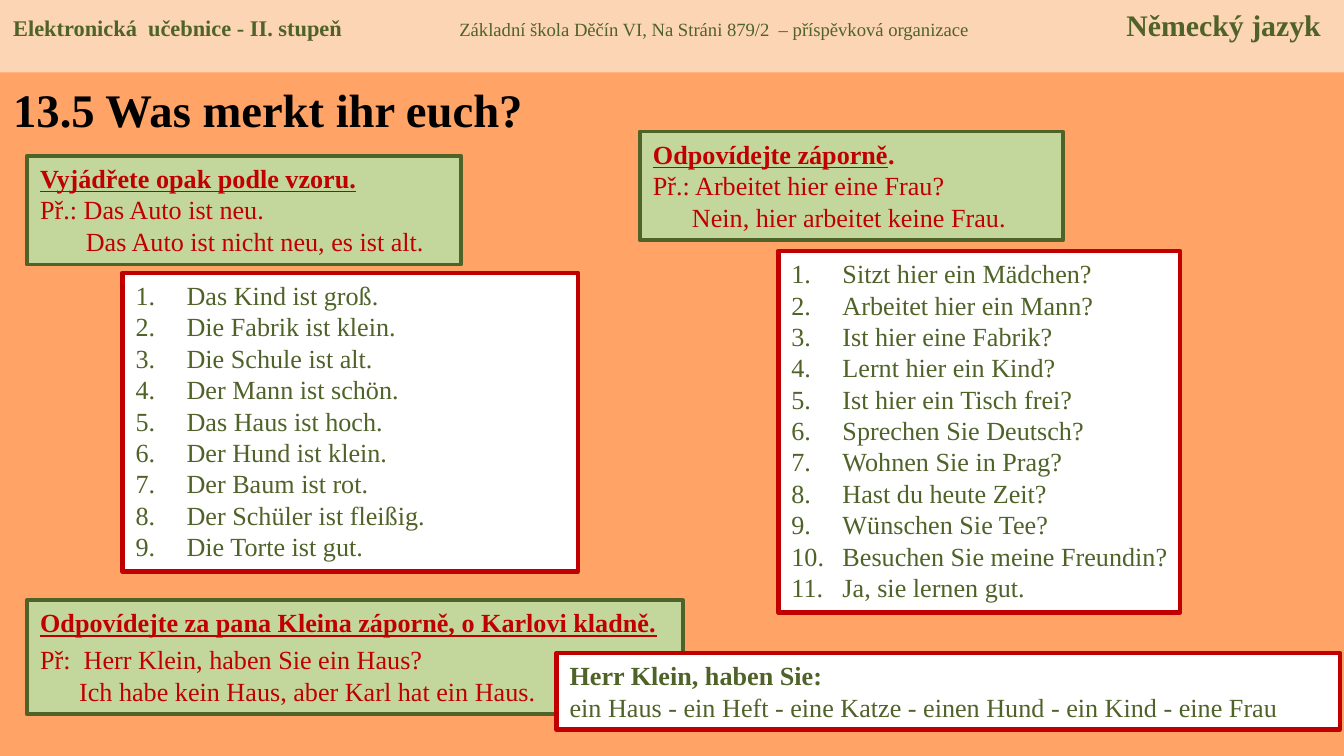
from lxml.etree import SubElement
from pptx import Presentation
from pptx.dml.color import RGBColor
from pptx.enum.shapes import MSO_SHAPE
from pptx.enum.text import MSO_ANCHOR, PP_ALIGN
from pptx.oxml.ns import qn
from pptx.util import Inches, Pt

WIDTH = Inches(10)
HEIGHT = WIDTH * 9 // 16
FONT = "Times New Roman"
COLORS = {
    "background": "FFA366",
    "header": "FCD5B5",
    "task": "C3D69B",
    "white": "FFFFFF",
    "black": "000000",
    "green": "4F6228",
    "red": "C00000",
}
OPPOSITES = [
    "Das Kind ist groß.", "Die Fabrik ist klein.", "Die Schule ist alt.",
    "Der Mann ist schön.", "Das Haus ist hoch.", "Der Hund ist klein.",
    "Der Baum ist rot.", "Der Schüler ist fleißig.", "Die Torte ist gut.",
]
QUESTIONS = [
    "Sitzt hier ein Mädchen?", "Arbeitet hier ein Mann?", "Ist hier eine Fabrik?",
    "Lernt hier ein Kind?", "Ist hier ein Tisch frei?", "Sprechen Sie Deutsch?",
    "Wohnen Sie in Prag?", "Hast du heute Zeit?", "Wünschen Sie Tee?",
    "Besuchen Sie meine Freundin?", "Ja, sie lernen gut.",
]


def color(name):
    """Return the named colour."""
    return RGBColor.from_string(COLORS[name])


def place(left, top, width, height):
    """Turn percentages of the slide's size into lengths."""
    return [int(share * side / 100) for share, side in
            zip((left, top, width, height), (WIDTH, HEIGHT) * 2)]


def style(run, size, color_name, bold=False, underline=False):
    """Format one run."""
    run.font.name = FONT
    run.font.size = Pt(size)
    run.font.bold = bold
    run.font.underline = underline
    run.font.color.rgb = color(color_name)


def add_box(slide, area, fill, line=None, line_width=0):
    """Add a filled rectangle and return its text frame."""
    shape = slide.shapes.add_shape(MSO_SHAPE.RECTANGLE, *place(*area))
    shape.shadow.inherit = False
    shape.fill.solid()
    shape.fill.fore_color.rgb = color(fill)
    if line:
        shape.line.color.rgb = color(line)
        shape.line.width = Pt(line_width)
    else:
        shape.line.fill.background()
    text_frame = shape.text_frame
    text_frame.word_wrap = True
    text_frame.vertical_anchor = MSO_ANCHOR.TOP
    return text_frame


def write_lines(text_frame, lines):
    """Fill a text frame with left-aligned paragraphs and return them."""
    text_frame.text = "\n".join(lines)
    for paragraph in text_frame.paragraphs:
        paragraph.alignment = PP_ALIGN.LEFT
    return text_frame.paragraphs


def add_title(slide, text):
    """Add the lesson title."""
    text_frame = slide.shapes.add_textbox(*place(0, 9.8, 40.4, 9.2)).text_frame
    text_frame.word_wrap = False
    text_frame.vertical_anchor = MSO_ANCHOR.MIDDLE
    paragraph = write_lines(text_frame, [text])[0]
    style(paragraph.runs[0], 25, "black", bold=True)


def add_header(slide, parts):
    """Add the header band with its parts set apart by tab stops."""
    text_frame = add_box(slide, (0, 0, 100, 9.6), "header")
    paragraph = text_frame.paragraphs[0]
    paragraph.alignment = PP_ALIGN.LEFT
    tabs = SubElement(paragraph._p.get_or_add_pPr(), qn("a:tabLst"))
    for position, alignment in ((3.32, "l"), (9.73, "r")):
        SubElement(tabs, qn("a:tab"), pos=str(Inches(position)), algn=alignment)
    for index, (text, size, bold) in enumerate(parts):
        run = paragraph.add_run()
        run.text = "\t" + text if index else text
        style(run, size, "green", bold)


def add_task(slide, area, heading, example, answer, indent, ending="", gap=0):
    """Add a task box with an underlined heading and a worked example."""
    text_frame = add_box(slide, area, "task", "green", 2)
    paragraphs = write_lines(text_frame, [heading, example, answer])
    for paragraph in paragraphs:
        is_heading = paragraph.text == heading
        style(paragraph.runs[0], 14, "red", is_heading, is_heading)
    if ending:
        run = paragraphs[0].add_run()
        run.text = ending
        style(run, 14, "red", bold=True)
    paragraphs[0].space_after = Pt(gap)
    paragraphs[2]._p.get_or_add_pPr().set("marL", str(Inches(indent)))


def add_exercise(slide, area, sentences):
    """Add a framed box with numbered sentences."""
    text_frame = add_box(slide, area, "white", "red", 2.5)
    text_frame.margin_right = Inches(0.05)
    for paragraph in write_lines(text_frame, sentences):
        properties = paragraph._p.get_or_add_pPr()
        properties.set("marL", str(Inches(0.38)))
        properties.set("indent", str(-Inches(0.38)))
        SubElement(properties, qn("a:buFont"), typeface="+mj-lt")
        SubElement(properties, qn("a:buAutoNum"), type="arabicPeriod")
        style(paragraph.runs[0], 14, "green")


def add_word_list(slide, area, heading, words):
    """Add a framed box with a bold heading and a row of words."""
    text_frame = add_box(slide, area, "white", "red", 2.5)
    paragraphs = write_lines(text_frame, [heading, " - ".join(words)])
    style(paragraphs[0].runs[0], 14, "green", bold=True)
    style(paragraphs[1].runs[0], 14, "green")


def main():
    """Build the slide and save it."""
    presentation = Presentation()
    presentation.slide_width, presentation.slide_height = WIDTH, HEIGHT
    slide = presentation.slides.add_slide(presentation.slide_layouts[6])
    slide.background.fill.solid()
    slide.background.fill.fore_color.rgb = color("background")

    add_title(slide, "13.5 Was merkt ihr euch?")
    add_task(slide, (2, 79.4, 48.8, 15.1),
             "Odpovídejte za pana Kleina záporně, o Karlovi kladně.",
             "Př:  Herr Klein, haben Sie ein Haus?",
             "Ich habe kein Haus, aber Karl hat ein Haus.", 0.29, gap=3)
    add_exercise(slide, (9.1, 36.1, 33.9, 39.5), OPPOSITES)
    add_task(slide, (2, 20.6, 32.3, 14.4), "Vyjádřete opak podle vzoru.",
             "Př.: Das Auto ist neu.",
             "Das Auto ist nicht neu, es ist alt.", 0.34)
    add_task(slide, (47.6, 17.4, 31.5, 14.4), "Odpovídejte záporně",
             "Př.: Arbeitet hier eine Frau?",
             "Nein, hier arbeitet keine Frau.", 0.29, ending=".")
    add_header(slide, [
        ("Elektronická  učebnice - II. stupeň", 12, True),
        ("Základní škola Děčín VI, Na Stráni 879/2  – příspěvková organizace", 10, False),
        ("Německý jazyk", 16, True),
    ])
    add_exercise(slide, (57.9, 33.2, 29.9, 47.8), QUESTIONS)
    add_word_list(slide, (41.4, 86.4, 58.3, 10.1), "Herr Klein, haben Sie:",
                  ["ein Haus", "ein Heft", "eine Katze", "einen Hund",
                   "ein Kind", "eine Frau"])
    presentation.save("out.pptx")


if __name__ == "__main__":
    main()
